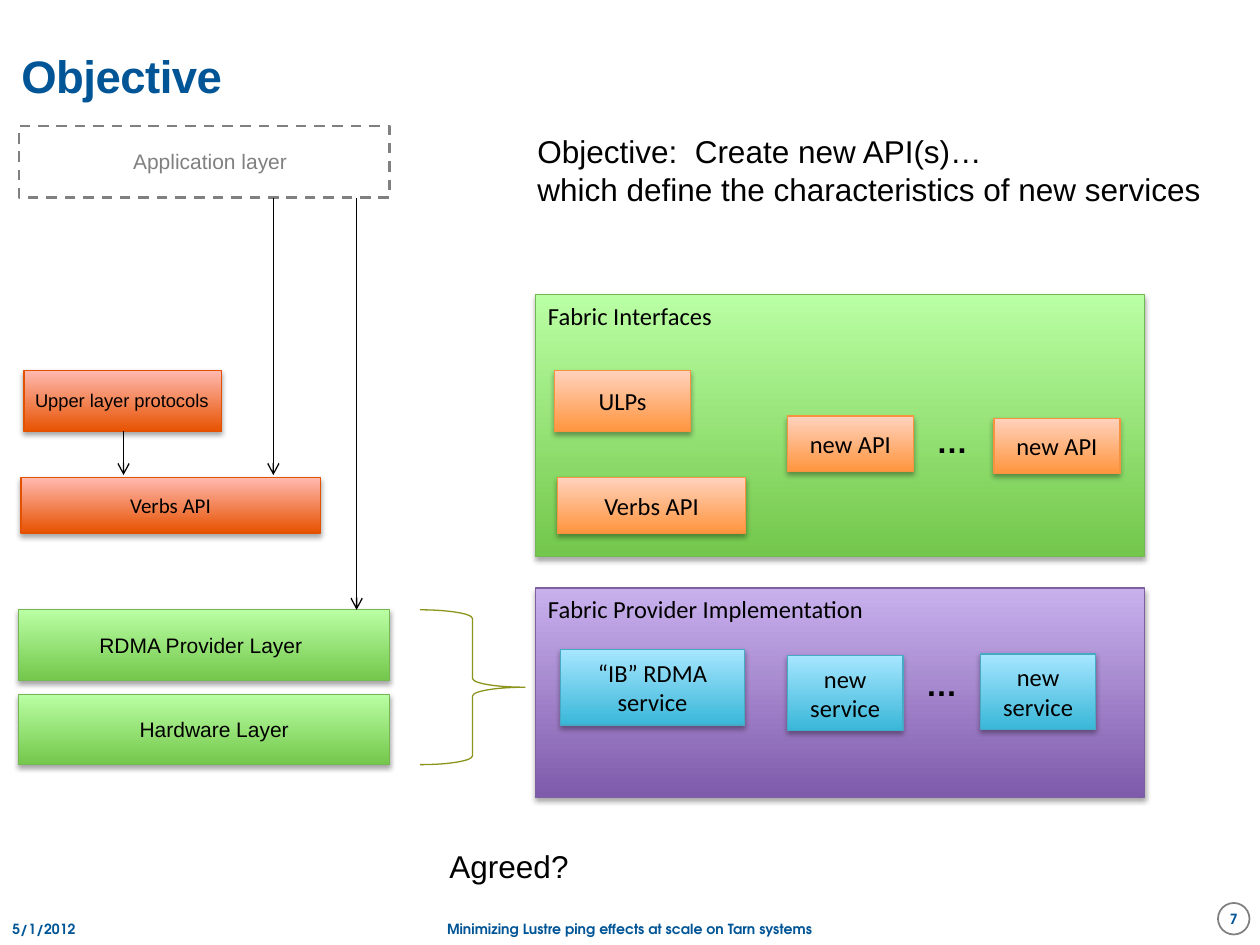
import pptx
import pptx.dml.color
import pptx.enum.dml
import pptx.enum.shapes
import pptx.enum.text
import pptx.oxml
import pptx.oxml.ns
import pptx.util
from lxml import etree

Pt = pptx.util.Pt
RGBColor = pptx.dml.color.RGBColor
SHAPES = pptx.enum.shapes.MSO_SHAPE
ALIGN = pptx.enum.text.PP_ALIGN
ANCHOR = pptx.enum.text.MSO_ANCHOR
AUTO_SIZE = pptx.enum.text.MSO_AUTO_SIZE
qn = pptx.oxml.ns.qn

BLACK = RGBColor(0x00, 0x00, 0x00)
WHITE = RGBColor(0xFF, 0xFF, 0xFF)
GRAY = RGBColor(0x80, 0x80, 0x80)
NAVY = RGBColor(0x00, 0x55, 0x96)
OLIVE = RGBColor(0x8C, 0x94, 0x1A)
GREEN = (RGBColor(0x73, 0xC7, 0x4B), RGBColor(0xBA, 0xFF, 0xA4), RGBColor(0x75, 0xB7, 0x55))
RED = (RGBColor(0xE7, 0x52, 0x00), RGBColor(0xFF, 0xB9, 0xB0), RGBColor(0xE2, 0x51, 0x00))
ORANGE = (RGBColor(0xFF, 0x95, 0x3E), RGBColor(0xFF, 0xD2, 0xBD), RGBColor(0xF6, 0x92, 0x40))
PURPLE = (RGBColor(0x7F, 0x5B, 0xAB), RGBColor(0xC8, 0xB0, 0xED), RGBColor(0x7D, 0x60, 0xA0))
BLUE = (RGBColor(0x39, 0xB7, 0xD8), RGBColor(0xA7, 0xE6, 0xFF), RGBColor(0x46, 0xAA, 0xC5))

TITLE_FONT = {"name": "Arial", "size": Pt(26), "bold": True}
FOOTER_FONT = {"name": "TeX Gyre Adventor", "size": Pt(8), "bold": True}
BOX_FONT = {"name": "Calibri", "size": Pt(14)}
SMALL_BOX_FONT = {"name": "Calibri", "size": Pt(12)}
LABEL_FONT = {"name": "Arial", "size": Pt(12)}
SMALL_LABEL_FONT = {"name": "Arial", "size": Pt(10.5)}
BODY_FONT = {"name": "Arial", "size": Pt(18)}
DOTS_FONT = {"name": "Arial", "size": Pt(18), "bold": True}
NO_MARGINS = dict.fromkeys(("margin_left", "margin_top", "margin_right", "margin_bottom"), 0)


def set_values(target, values):
    for name, value in values.items():
        setattr(target, name, value)


def write_text(shape, text, font, color=BLACK, align=ALIGN.LEFT, **frame_values):
    frame = shape.text_frame
    set_values(frame, {"word_wrap": True, **frame_values})
    frame.text = text
    for paragraph in frame.paragraphs:
        paragraph.alignment = align
        for run in paragraph.runs:
            set_values(run.font, font)
            run.font.color.rgb = color


def add_shape(slide, kind, place, line_color, line_width=0.75):
    shape = slide.shapes.add_shape(kind, *map(Pt, place))
    shape.shadow.inherit = False
    shape.fill.background()
    shape.line.color.rgb = line_color
    shape.line.width = Pt(line_width)
    return shape


def add_shadow(shape):
    effects = shape._element.spPr.find(qn("a:effectLst"))
    effects.append(pptx.oxml.parse_xml(
        f'<a:outerShdw {pptx.oxml.ns.nsdecls("a")} blurRad="{Pt(3.1)}" dist="{Pt(1.8)}" '
        'dir="5400000" rotWithShape="0"><a:srgbClr val="000000">'
        '<a:alpha val="35000"/></a:srgbClr></a:outerShdw>'))


def add_box(slide, place, colors, text="", font=BOX_FONT, align=ALIGN.CENTER, anchor=ANCHOR.MIDDLE):
    bottom, top, line_color = colors
    box = add_shape(slide, SHAPES.RECTANGLE, place, line_color)
    box.fill.gradient()
    box.fill.gradient_angle = 90
    for stop, color, position in zip(box.fill.gradient_stops, (bottom, top), (0, 1)):
        stop.color.rgb = color
        stop.position = position
    add_shadow(box)
    if text:
        write_text(box, text, font, align=align, vertical_anchor=anchor)


def add_label(slide, place, text, font, color=BLACK):
    label = slide.shapes.add_textbox(*map(Pt, place))
    write_text(label, text, font, color, word_wrap=False, auto_size=AUTO_SIZE.SHAPE_TO_FIT_TEXT)


def add_footer(slide, place, text, align):
    footer = slide.shapes.add_textbox(*map(Pt, place))
    write_text(footer, text, FOOTER_FONT, NAVY, align, vertical_anchor=ANCHOR.MIDDLE)


def add_down_arrow(slide, x, top, bottom):
    arrow = slide.shapes.add_connector(
        pptx.enum.shapes.MSO_CONNECTOR.STRAIGHT, Pt(x), Pt(top), Pt(x), Pt(bottom))
    arrow.line.color.rgb = BLACK
    arrow.line.width = Pt(0.75)
    etree.SubElement(arrow.line._get_or_add_ln(), qn("a:tailEnd"), type="arrow")
    etree.SubElement(arrow._element.spPr, qn("a:effectLst"))


def add_title(slide, text):
    title = slide.shapes.title
    set_values(title, {"left": Pt(12.2), "top": Pt(12.2), "width": Pt(576), "height": Pt(66.2)})
    write_text(title, text, TITLE_FONT, NAVY, vertical_anchor=ANCHOR.MIDDLE,
               auto_size=AUTO_SIZE.NONE, **NO_MARGINS)
    paragraph = title.text_frame.paragraphs[0]
    paragraph.line_spacing = 0.85
    paragraph.runs[0]._r.get_or_add_rPr().set("spc", "-30")


def add_footers(slide):
    add_footer(slide, (0, 522, 168, 18), "5/1/2012", ALIGN.LEFT)
    add_footer(slide, (246, 522, 228, 18),
               "Minimizing Lustre ping effects at scale on Tarn systems", ALIGN.CENTER)
    badge = add_shape(slide, SHAPES.OVAL, (696, 516, 18, 18), GRAY, 1)
    badge.fill.solid()
    badge.fill.fore_color.rgb = WHITE
    write_text(badge, "7", FOOTER_FONT, NAVY, ALIGN.CENTER,
               vertical_anchor=ANCHOR.MIDDLE, **NO_MARGINS)


def add_current_stack(slide):
    application = add_shape(slide, SHAPES.RECTANGLE, (10.8, 72, 211.7, 41), GRAY, 1.5)
    application.line.dash_style = pptx.enum.dml.MSO_LINE.DASH
    add_label(slide, (69, 81.4, 103, 21.8), "Application layer", LABEL_FONT, GRAY)
    add_box(slide, (13.7, 211.7, 113, 35), RED)
    add_label(slide, (13, 218.9, 120.2, 20.6), "Upper layer protocols", SMALL_LABEL_FONT)
    add_box(slide, (12, 272.9, 171, 31.7), RED, "Verbs API", SMALL_BOX_FONT)
    for top in (348.5, 396.7):
        add_box(slide, (10.8, top, 211.7, 40.3), GREEN)
    add_label(slide, (49.7, 358, 131, 21.8), "RDMA Provider Layer", LABEL_FONT)
    add_label(slide, (72.7, 406.1, 100, 21.8), "Hardware Layer", LABEL_FONT)
    for x, top, bottom in ((70.6, 246.5, 271.5), (156.2, 113, 271.5), (203.8, 113, 348.5)):
        add_down_arrow(slide, x, top, bottom)
    add_shape(slide, SHAPES.RIGHT_BRACE, (240, 348.5, 60, 88.5), OLIVE)


def add_new_stack(slide):
    for top, height, colors, text in (
            (168.3, 149.7, GREEN, "Fabric Interfaces"),
            (336, 119.6, PURPLE, "Fabric Provider Implementation")):
        add_box(slide, (306, top, 348, height), colors, text, align=ALIGN.LEFT, anchor=ANCHOR.TOP)
    for place, colors, text in (
            ((316.8, 211.7, 78, 35), ORANGE, "ULPs"),
            ((318.6, 272.9, 107.5, 31.7), ORANGE, "Verbs API"),
            ((450, 237.8, 72, 31.7), ORANGE, "new API"),
            ((568, 239, 72, 31.7), ORANGE, "new API"),
            ((320.2, 371.2, 105.4, 43.2), BLUE, "“IB” RDMA service"),
            ((450, 374.4, 66, 43.2), BLUE, "new service"),
            ((560.2, 373.7, 66, 43.2), BLUE, "new service")):
        add_box(slide, place, colors, text)
    for left, top in ((528, 237.8), (522, 376.6)):
        add_label(slide, (left, top, 32.4, 29), "…", DOTS_FONT)


def main():
    presentation = pptx.Presentation()
    set_values(presentation, {"slide_width": Pt(720), "slide_height": Pt(540)})
    slide = presentation.slides.add_slide(presentation.slide_layouts[5])
    add_title(slide, "Objective")
    add_footers(slide)
    add_current_stack(slide)
    add_new_stack(slide)
    add_label(slide, (300, 72, 397.4, 51),
              "Objective:  Create new API(s)…\nwhich define the characteristics of new services", BODY_FONT)
    add_label(slide, (249.8, 480.2, 83.5, 29), "Agreed?", BODY_FONT)
    presentation.save("out.pptx")


if __name__ == "__main__":
    main()
